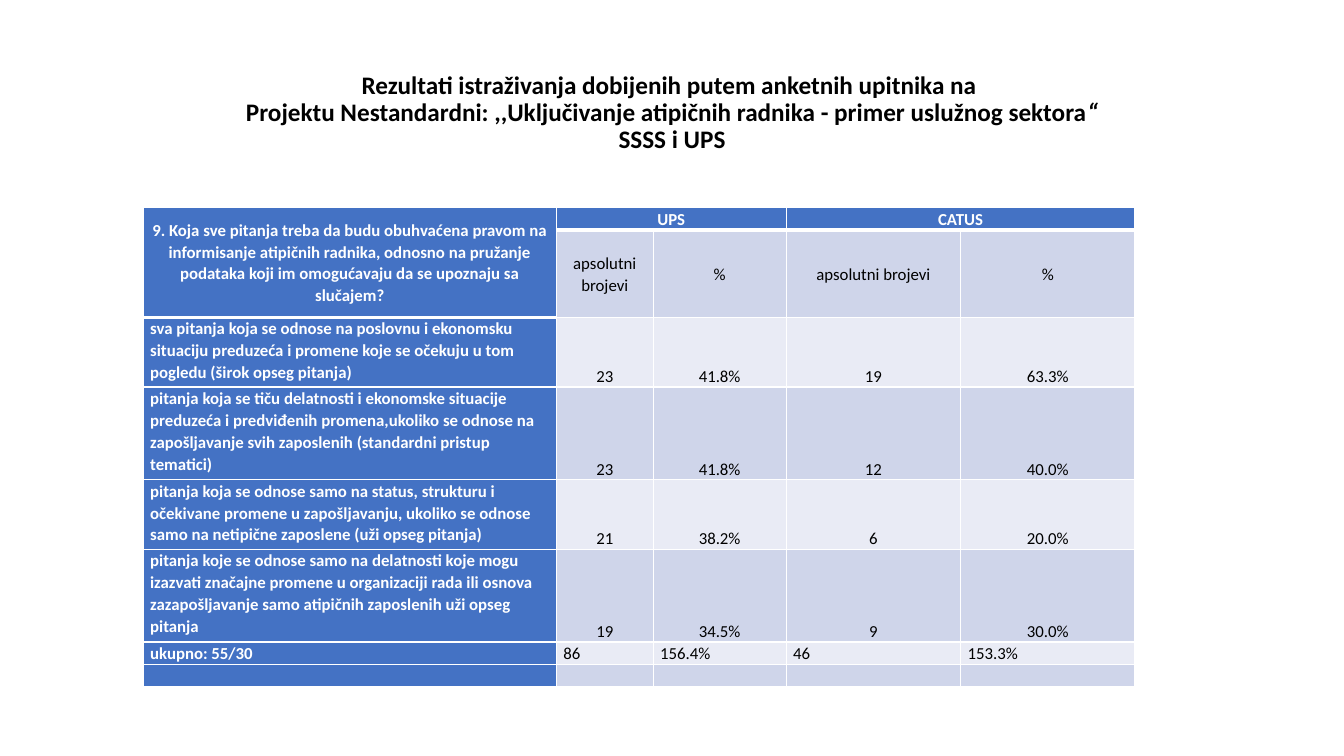
from lxml import etree
from pptx import Presentation
from pptx import util as u
from pptx.dml.color import RGBColor
from pptx.enum import text
from pptx.oxml import ns

BLACK = RGBColor(0x00, 0x00, 0x00)
WHITE = RGBColor(0xFF, 0xFF, 0xFF)
BLUE = RGBColor(0x44, 0x72, 0xC4)
BAND_DARK = RGBColor(0xCF, 0xD5, 0xEA)
BAND_LIGHT = RGBColor(0xE9, 0xEB, 0xF5)

LEFT, CENTER, JUSTIFY = text.PP_ALIGN.LEFT, text.PP_ALIGN.CENTER, text.PP_ALIGN.JUSTIFY
TOP, MIDDLE, BOTTOM = text.MSO_ANCHOR.TOP, text.MSO_ANCHOR.MIDDLE, text.MSO_ANCHOR.BOTTOM

TITLE_RUNS = [
    ("Rezultati istraživanja dobijenih putem anketnih upitnika na \v"
     "Projektu Nestandardni: ,,Uključivanje atipičnih radnika - primer uslužnog sektora", False),
    ("“\v", True),
    ("SSSS i UPS", False),
]
QUESTION = ("9. Koja sve pitanja treba da budu obuhvaćena pravom na informisanje atipičnih radnika, "
            "odnosno na pružanje podataka koji im omogućavaju da se upoznaju sa slučajem?")
HEADINGS = [
    [QUESTION, "UPS", "", "CATUS", ""],
    ["", "apsolutni brojevi", "%", "apsolutni brojevi", "%"],
]
ANSWERS = [
    ["sva pitanja koja se odnose na poslovnu i ekonomsku situaciju preduzeća i promene koje se "
     "očekuju u tom pogledu (širok opseg pitanja)", "23", "41.8%", "19", "63.3%"],
    ["pitanja koja se tiču delatnosti i ekonomske situacije preduzeća i predviđenih "
     "promena,ukoliko se odnose na zapošljavanje svih zaposlenih (standardni pristup tematici)",
     "23", "41.8%", "12", "40.0%"],
    ["pitanja koja se odnose samo na status, strukturu i očekivane promene u zapošljavanju, "
     "ukoliko se odnose samo na netipične zaposlene (uži opseg pitanja)",
     "21", "38.2%", "6", "20.0%"],
    ["pitanja koje se odnose samo na delatnosti koje mogu izazvati značajne promene u "
     "organizaciji rada ili osnova zazapošljavanje samo atipičnih zaposlenih uži opseg pitanja",
     "19", "34.5%", "9", "30.0%"],
]
TOTALS = [["ukupno: 55/30", "86", "156.4%", "46", "153.3%"], [""] * 5]
MERGES = [((0, 0), (1, 0)), ((0, 1), (0, 2)), ((0, 3), (0, 4))]
COLUMN_SHARES = [30.75, 7.2, 9.9, 12.98, 12.98]
ROW_SHARES = [2.93, 9.33, 9.2, 12.27, 9.2, 12.27, 2.93, 2.93]


class SlideBuilder:
    """Holds the style and current slide; lengths are percent of the slide's size."""

    font_name = "Calibri"

    def __init__(self, presentation):
        self.width, self.height = presentation.slide_width, presentation.slide_height
        self.slide = presentation.slides.add_slide(presentation.slide_layouts[5])

    def across(self, share):
        return round(self.width * share / 100)

    def down(self, share):
        return round(self.height * share / 100)

    def style(self, paragraph, size, color, bold, alignment, spacing):
        paragraph.alignment, paragraph.line_spacing = alignment, spacing
        font = paragraph.font
        font.name, font.size, font.bold = self.font_name, u.Pt(size), bold
        font.color.rgb = color

    def title(self, runs, left, top, width, height):
        shape = self.slide.shapes.title
        shape.left, shape.top = self.across(left), self.down(top)
        shape.width, shape.height = self.across(width), self.down(height)
        frame = shape.text_frame
        frame.auto_size, frame.vertical_anchor = text.MSO_AUTO_SIZE.NONE, MIDDLE
        paragraph = frame.paragraphs[0]
        for words, italic in runs:
            line, *rest = words.split("\v")
            self.run(paragraph, line, italic)
            for line in rest:
                paragraph.add_line_break()
                self.run(paragraph, line, italic)
        self.style(paragraph, 18, BLACK, True, CENTER, 0.9)

    def run(self, paragraph, words, italic):
        if words:
            run = paragraph.add_run()
            run.text = words
            if italic:
                run.font.italic = True

    def borders(self, cell, top, bottom):
        properties = cell._tc.get_or_add_tcPr()
        for side, points in (("L", 1), ("R", 1), ("T", top), ("B", bottom)):
            line = etree.SubElement(properties, ns.qn(f"a:ln{side}"), w=str(u.Pt(points)))
            fill = etree.SubElement(line, ns.qn("a:solidFill"))
            etree.SubElement(fill, ns.qn("a:srgbClr"), val=str(WHITE))

    def cell(self, cell, words, row, column):
        heading, total = row < 2, row > 5
        label = column == 0 or row == 0
        self.borders(cell, 3 if row == 1 or (row, column) == (2, 0) else 1,
                     3 if row == 0 or (row, column) == (1, 0) else 1)
        cell.fill.solid()
        cell.fill.fore_color.rgb = BLUE if label else BAND_DARK if row % 2 else BAND_LIGHT
        cell.margin_left = cell.margin_right = u.Inches(0.07)
        cell.margin_top = cell.margin_bottom = 0
        cell.text = words
        if heading:
            cell.vertical_anchor, alignment = MIDDLE, CENTER
        elif total:
            cell.vertical_anchor, alignment = BOTTOM, JUSTIFY
        else:
            cell.vertical_anchor, alignment = (TOP, LEFT) if label else (BOTTOM, CENTER)
        self.style(cell.text_frame.paragraphs[0], 12, WHITE if label else BLACK,
                   label, alignment, 1.07)

    def table(self, rows, left, top, column_shares, row_shares, merges):
        frame = self.slide.shapes.add_table(
            len(rows), len(column_shares), self.across(left), self.down(top),
            self.across(sum(column_shares)), self.down(sum(row_shares)))
        table = frame.table
        for column, share in zip(table.columns, column_shares):
            column.width = self.across(share)
        for row, share in zip(table.rows, row_shares):
            row.height = self.down(share)
        for row, values in enumerate(rows):
            for column, words in enumerate(values):
                self.cell(table.cell(row, column), words, row, column)
        for first, last in merges:
            table.cell(*first).merge(table.cell(*last))


def main():
    presentation = Presentation()
    presentation.slide_width, presentation.slide_height = u.Inches(13.33), u.Inches(7.5)
    builder = SlideBuilder(presentation)
    builder.title(TITLE_RUNS, 6.88, 5.33, 86.25, 19.33)
    builder.table(HEADINGS + ANSWERS + TOTALS, 10.65, 27.47, COLUMN_SHARES, ROW_SHARES, MERGES)
    presentation.save("out.pptx")


if __name__ == "__main__":
    main()
